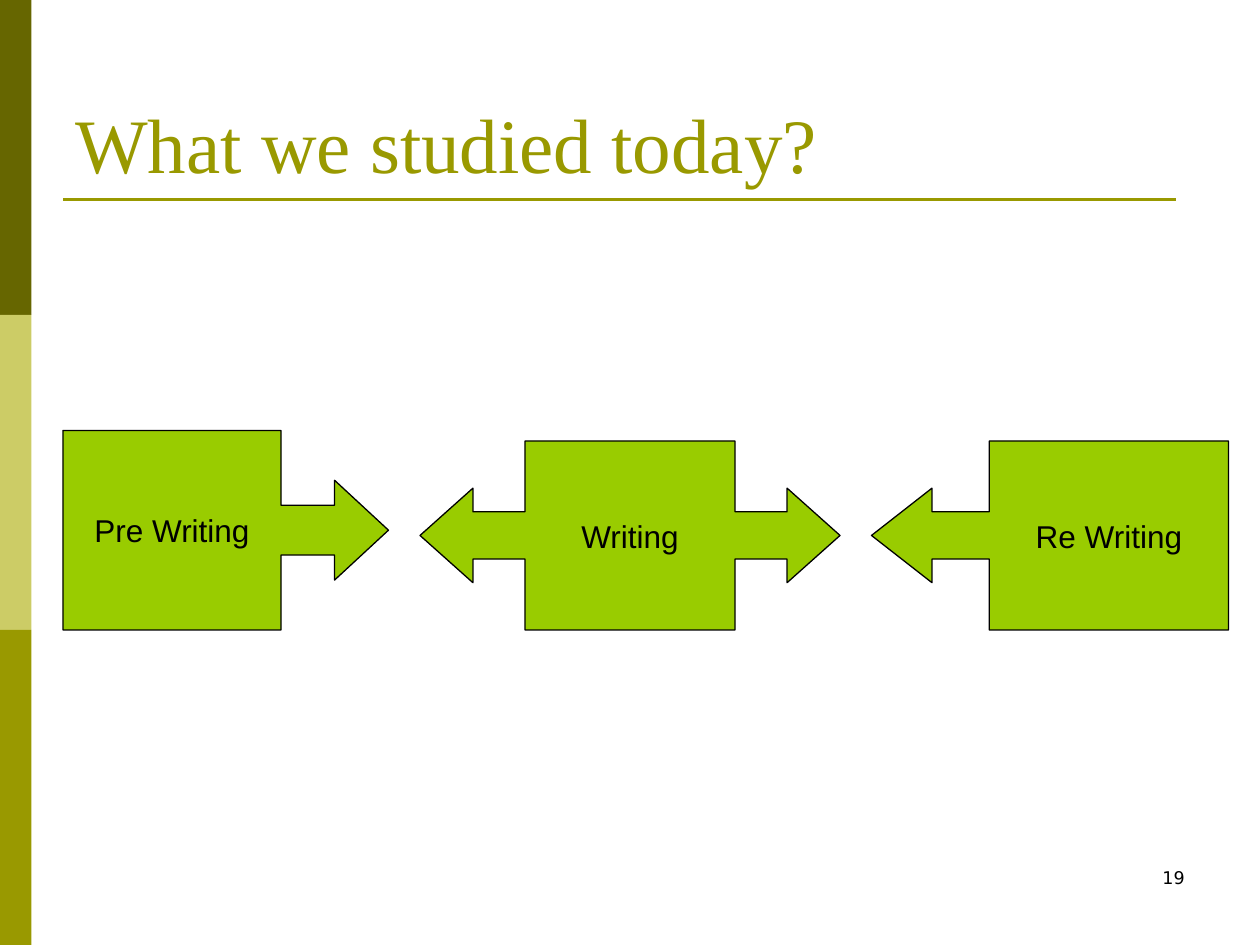
from pptx import Presentation
from pptx.dml.color import RGBColor
from pptx.enum.shapes import MSO_CONNECTOR, MSO_SHAPE as Shape
from pptx.enum.text import MSO_ANCHOR as Anchor, PP_ALIGN as Align
from pptx.oxml.ns import qn
from pptx.util import Inches, Pt


def color(value):
    return RGBColor.from_string(value)


def grid(*units):
    """Turn grid units (120 columns by 90 rows, 12 to the inch) into lengths."""
    return [Inches(unit / 12) for unit in units]


class Page:
    """The current slide and its style."""

    OLIVE, DARK, PALE = "999900", "666600", "CCCC66"
    GREEN, INK = "99CC00", "000000"

    def __init__(self, deck):
        self.slide = deck.slides.add_slide(deck.slide_layouts[6])
        self.shapes = self.slide.shapes

    def label(self, shape, text, size, font, ink, align, anchor, wrap=True):
        frame = shape.text_frame
        frame.word_wrap = wrap
        frame.vertical_anchor = anchor
        para = frame.paragraphs[0]
        para.text = text
        para.alignment = align
        para.font.size = Pt(size)
        para.font.name = font
        para.font.color.rgb = color(ink)

    def text(self, place, *style):
        self.label(self.shapes.add_textbox(*grid(*place)), *style)

    def block(self, kind, place, fill):
        shape = self.shapes.add_shape(kind, *grid(*place))
        shape.shadow.inherit = False
        shape.fill.solid()
        shape.fill.fore_color.rgb = color(fill)
        shape.line.fill.background()
        return shape

    def callout(self, kind, place, head, body, text):
        shape = self.block(kind, place, self.GREEN)
        shape.line.color.rgb = color(self.INK)
        shape.line.width = Pt(0.75)
        for index, value in enumerate((0.25, 0.25, head, body)):
            shape.adjustments[index] = value
        self.label(shape, text, 18, "Arial", self.INK,
                   Align.CENTER, Anchor.MIDDLE, False)

    def rule(self, left, right, row):
        line = self.shapes.add_connector(
            MSO_CONNECTOR.STRAIGHT, *grid(left, row, right, row))
        line.line.color.rgb = color(self.OLIVE)
        line.line.width = Pt(1.5)
        properties = line._element.spPr
        properties.append(properties.makeelement(qn("a:effectLst"), {}))


def main():
    deck = Presentation()
    deck.slide_width, deck.slide_height = grid(120, 90)
    page = Page(deck)

    # Side band in three equal parts
    for index, fill in enumerate((page.DARK, page.PALE, page.OLIVE)):
        page.block(Shape.RECTANGLE, (0, 30 * index, 3, 30), fill)

    # Title, its rule and the page number
    page.rule(6, 112, 19)
    page.text((6, 3.6, 108, 15), "What we studied today?", 44,
              "Times New Roman", page.OLIVE, Align.LEFT, Anchor.BOTTOM)
    page.text((86, 82, 28, 6), "19", 10, "DejaVu Sans", page.INK,
              Align.RIGHT, Anchor.TOP)

    # Writing stages
    page.callout(Shape.RIGHT_ARROW_CALLOUT, (6, 41, 31, 19),
                 0.27, 0.67, "Pre Writing")
    page.callout(Shape.LEFT_RIGHT_ARROW_CALLOUT, (40, 42, 40, 18),
                 0.28, 0.5, "Writing")
    page.callout(Shape.LEFT_ARROW_CALLOUT, (83, 42, 34, 18),
                 0.32, 0.67, "Re Writing")

    deck.save("out.pptx")


if __name__ == "__main__":
    main()
